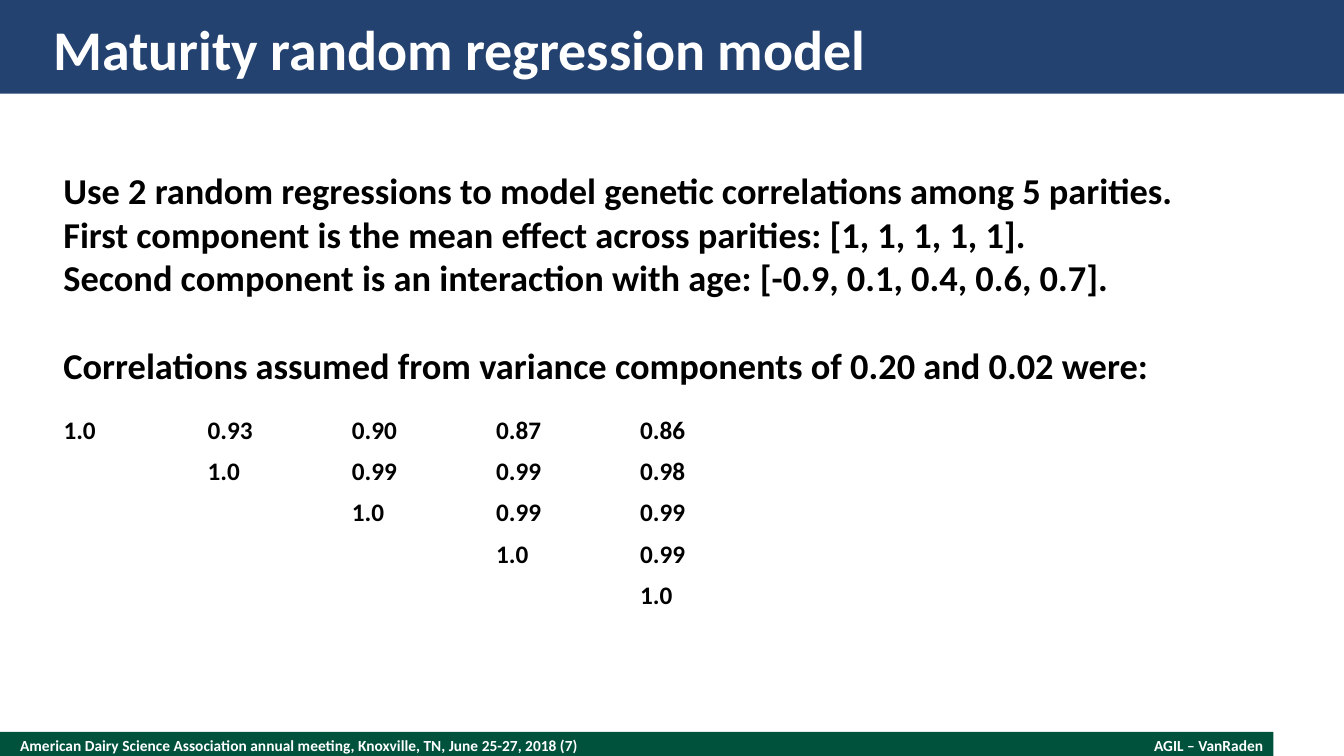
from dataclasses import dataclass

from pptx import Presentation
from pptx.dml.color import RGBColor
from pptx.enum.shapes import MSO_SHAPE
from pptx.enum.text import MSO_ANCHOR, PP_ALIGN
from pptx.slide import Slide
from pptx.text.text import _Paragraph
from pptx.util import Inches, Pt

RECTANGLE = MSO_SHAPE.RECTANGLE
MIDDLE, TOP = MSO_ANCHOR.MIDDLE, MSO_ANCHOR.TOP
LEFT, RIGHT = PP_ALIGN.LEFT, PP_ALIGN.RIGHT

FONT = "Calibri"
COLORS = {"green": "00523C", "navy": "244270", "white": "FFFFFF", "black": "000000"}


@dataclass(frozen=True)
class Box:
    left: float
    top: float
    width: float
    height: float

    def lengths(self) -> tuple[Inches, Inches, Inches, Inches]:
        return Inches(self.left), Inches(self.top), Inches(self.width), Inches(self.height)


@dataclass(frozen=True)
class Band:
    box: Box
    color: str


@dataclass(frozen=True)
class Line:
    text: str
    space_before: float = 0


@dataclass(frozen=True)
class TextBlock:
    box: Box
    lines: tuple[Line, ...]
    size: float
    color: str = "white"
    align: PP_ALIGN = LEFT
    anchor: MSO_ANCHOR = MIDDLE
    margin_x: float = 0
    margin_y: float = 0
    wrap: bool = True


BANDS = (
    Band(Box(0, 7.26, 12.63, 0.27), "green"),
    Band(Box(0, 0, 13.33, 0.93), "navy"),
)

TEXT_BLOCKS = (
    TextBlock(
        Box(0.2, 7.26, 8.67, 0.27),
        (Line("American Dairy Science Association annual meeting, Knoxville, TN, June 25-27, 2018 (7)"),),
        11,
    ),
    TextBlock(Box(9.6, 7.3, 2.93, 0.19), (Line("AGIL – VanRaden"),), 11, align=RIGHT),
    TextBlock(Box(0.53, 0.13, 12.27, 0.7), (Line("Maturity random regression model"),), 40),
    TextBlock(
        Box(0.53, 1.62, 11.35, 2.29),
        (
            Line("Use 2 random regressions to model genetic correlations among 5 parities."),
            Line("First component is the mean effect across parities: [1, 1, 1, 1, 1]."),
            Line("Second component is an interaction with age: [-0.9, 0.1, 0.4, 0.6, 0.7]."),
            Line("Correlations assumed from variance components of 0.20 and 0.02 were:", 31.7),
        ),
        26,
        color="black",
        anchor=TOP,
        margin_x=0.1,
        margin_y=0.05,
        wrap=False,
    ),
)

# Upper triangle: each row starts on the diagonal.
CORRELATIONS = (
    ("1.0", "0.93", "0.90", "0.87", "0.86"),
    ("1.0", "0.99", "0.99", "0.98"),
    ("1.0", "0.99", "0.99"),
    ("1.0", "0.99"),
    ("1.0",),
)
COLUMN_WIDTH, ROW_HEIGHT = 1.43, 0.41


def add_bold_run(paragraph: _Paragraph, text: str, size: float, color: str) -> None:
    run = paragraph.add_run()
    run.text = text
    run.font.name = FONT
    run.font.size = Pt(size)
    run.font.bold = True
    run.font.color.rgb = RGBColor.from_string(COLORS[color])


def add_band(slide: Slide, band: Band) -> None:
    shape = slide.shapes.add_shape(RECTANGLE, *band.box.lengths())
    shape.shadow.inherit = False
    shape.fill.solid()
    shape.fill.fore_color.rgb = RGBColor.from_string(COLORS[band.color])
    shape.line.fill.background()


def add_text_block(slide: Slide, block: TextBlock) -> None:
    frame = slide.shapes.add_textbox(*block.box.lengths()).text_frame
    frame.word_wrap = block.wrap
    frame.vertical_anchor = block.anchor
    frame.margin_left = frame.margin_right = Inches(block.margin_x)
    frame.margin_top = frame.margin_bottom = Inches(block.margin_y)
    for index, line in enumerate(block.lines):
        paragraph = frame.add_paragraph() if index else frame.paragraphs[0]
        paragraph.alignment = block.align
        if line.space_before:
            paragraph.space_before = Pt(line.space_before)
        add_bold_run(paragraph, line.text, block.size, block.color)


def add_correlation_table(slide: Slide) -> None:
    parities = len(CORRELATIONS)
    box = Box(0.53, 4.07, parities * COLUMN_WIDTH, parities * ROW_HEIGHT)
    table = slide.shapes.add_table(parities, parities, *box.lengths()).table
    table.first_row = table.horz_banding = False
    for column in table.columns:
        column.width = Inches(COLUMN_WIDTH)
    for row in table.rows:
        row.height = Inches(ROW_HEIGHT)
    for cell in table.iter_cells():
        cell.fill.background()
    for diagonal, values in enumerate(CORRELATIONS):
        for column_index, value in enumerate(values, start=diagonal):
            paragraph = table.cell(diagonal, column_index).text_frame.paragraphs[0]
            add_bold_run(paragraph, value, 18, "black")


def main() -> None:
    presentation = Presentation()
    presentation.slide_width = Inches(13.33)
    presentation.slide_height = Inches(7.5)
    slide = presentation.slides.add_slide(presentation.slide_layouts[6])
    for band in BANDS:
        add_band(slide, band)
    for block in TEXT_BLOCKS:
        add_text_block(slide, block)
    add_correlation_table(slide)
    presentation.save("out.pptx")


if __name__ == "__main__":
    main()
